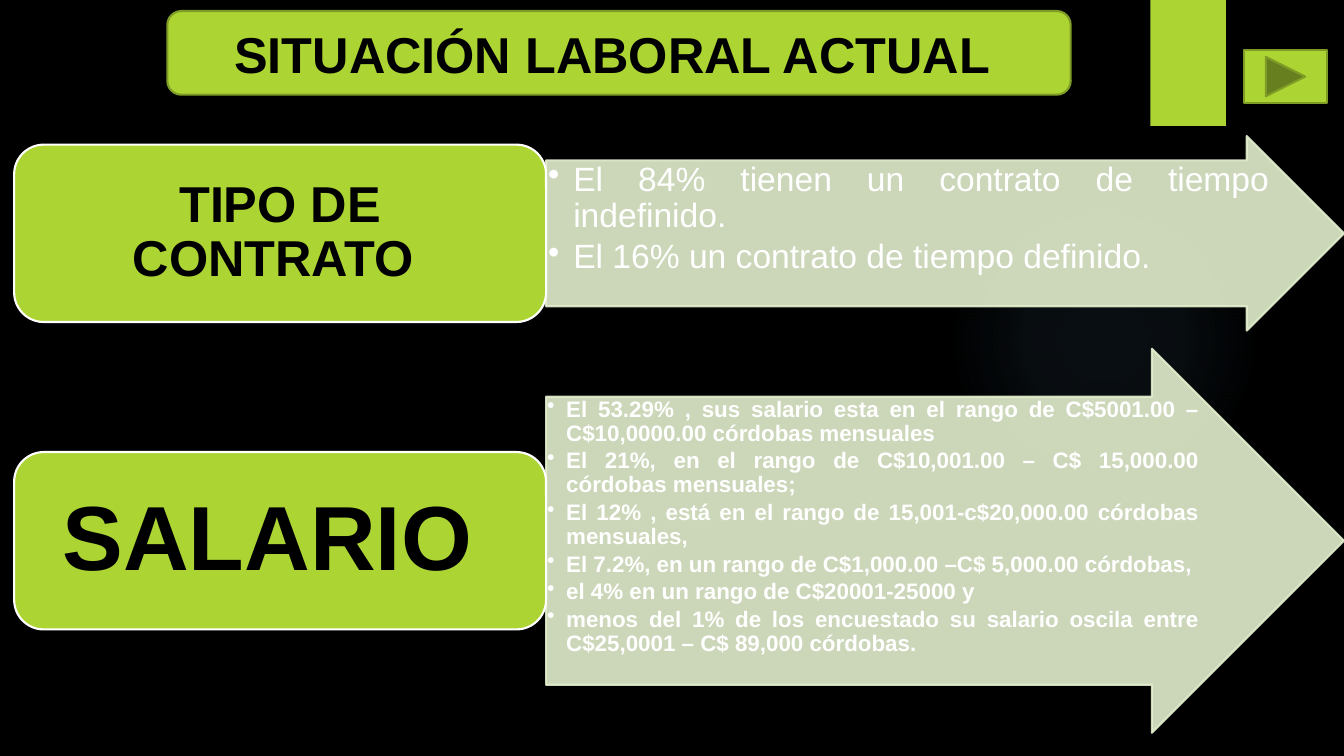
from lxml import etree
from pptx import Presentation
from pptx.dml.color import RGBColor
from pptx.enum.shapes import MSO_SHAPE
from pptx.enum.text import MSO_ANCHOR, PP_ALIGN
from pptx.oxml import parse_xml
from pptx.oxml.ns import nsdecls, qn
from pptx.util import Inches, Pt

RECTANGLE, ROUNDED = MSO_SHAPE.RECTANGLE, MSO_SHAPE.ROUNDED_RECTANGLE
ARROW, OVAL = MSO_SHAPE.RIGHT_ARROW, MSO_SHAPE.OVAL
NEXT_BUTTON = MSO_SHAPE.ACTION_BUTTON_FORWARD_OR_NEXT
TOP, MIDDLE = MSO_ANCHOR.TOP, MSO_ANCHOR.MIDDLE
CENTER, JUSTIFY = PP_ALIGN.CENTER, PP_ALIGN.JUSTIFY

WIDTH, HEIGHT = 13.33, 7.5
BLACK, WHITE = "000000", "FFFFFF"
LIME, OLIVE, PALE, SKY = "ACD433", "7F9D26", "E3EFCE", "7AC4F0"

ROWS_LEFT, ROWS_TOP, ROW_GAP = 0.14, 1.35, 0.18
LABEL_SHARE, LABEL_HEIGHT = 0.4, 1.76
ROWS = [
    dict(
        height=1.93, label="TIPO DE CONTRATO ", label_size=36,
        label_margins=(0.15, 0.07), size=24, bold=False, indent=0.25, margin=0.02,
        points=[
            "El 84% tienen un contrato de tiempo indefinido.",
            "El 16% un contrato de tiempo definido. ",
        ],
    ),
    dict(
        height=3.81, label="SALARIO ", label_size=65,
        label_margins=(0.27, 0.14), size=16, bold=True, indent=0.19, margin=0.01,
        points=[
            "El 53.29% , sus salario esta en el rango de C$5001.00 – C$10,0000.00 córdobas mensuales",
            "El 21%, en el rango de C$10,001.00 – C$ 15,000.00 córdobas mensuales; ",
            "El 12% , está en el rango de 15,001-c$20,000.00 córdobas mensuales, ",
            "El 7.2%, en un rango de C$1,000.00 –C$ 5,000.00 córdobas,",
            "el 4% en un rango de C$20001-25000 y",
            "menos del 1% de los encuestado su salario oscila entre C$25,0001 – C$ 89,000 córdobas. ",
        ],
    ),
]


def color(value):
    return RGBColor.from_string(value)


def add_block(slide, kind, box, fill=LIME, line=None):
    shape = slide.shapes.add_shape(kind, *map(Inches, box))
    shape.shadow.inherit = False
    shape.fill.solid()
    shape.fill.fore_color.rgb = color(fill)
    if line:
        shape.line.color.rgb = color(line)
        shape.line.width = Pt(1.5)
    else:
        shape.line.fill.background()
    return shape


def add_bullet(paragraph, indent):
    properties = paragraph._p.get_or_add_pPr()
    properties.set("marL", str(Inches(indent)))
    properties.set("indent", str(-Inches(indent)))
    etree.SubElement(properties, qn("a:buChar")).set("char", "•")


def write(shape, texts, size, font_color, bold, alignment, anchor,
          margins=(0.1, 0.05), indent=0, spacing=1.0, space_after=0):
    frame = shape.text_frame
    frame.word_wrap = True
    frame.vertical_anchor = anchor
    frame.margin_left = frame.margin_right = Inches(margins[0])
    frame.margin_top = frame.margin_bottom = Inches(margins[1])
    for number, text in enumerate(texts):
        paragraph = frame.add_paragraph() if number else frame.paragraphs[0]
        paragraph.text = text
        if indent:
            add_bullet(paragraph, indent)
        paragraph.alignment = alignment
        paragraph.line_spacing = spacing
        paragraph.space_after = Pt(space_after)
        font = paragraph.font
        font.name, font.size, font.bold = "Arial", Pt(size), bold
        font.color.rgb = color(font_color)


def make_translucent(shape, percent):
    """Apply one opacity to the fill and the outline."""
    for tint in shape._element.spPr.iter(qn("a:srgbClr")):
        etree.SubElement(tint, qn("a:alpha")).set("val", str(percent * 1000))


def add_glow(slide, box):
    """Add a faint disc that fades out from its centre."""
    glow = add_block(slide, OVAL, box, SKY)
    stops = "".join(
        f'<a:gs pos="{position * 1000}"><a:srgbClr val="{SKY}">'
        f'<a:alpha val="{opacity * 1000}"/></a:srgbClr></a:gs>'
        for position, opacity in [(0, 7), (36, 6), (69, 0), (100, 0)])
    gradient = parse_xml(
        f'<a:gradFill {nsdecls("a")} rotWithShape="1"><a:gsLst>{stops}</a:gsLst>'
        '<a:path path="circle"><a:fillToRect l="50000" t="50000" r="50000" b="50000"/>'
        '</a:path></a:gradFill>')
    properties = glow._element.spPr
    properties.replace(properties.find(qn("a:solidFill")), gradient)


def add_backdrop(slide):
    slide.background.fill.solid()
    slide.background.fill.fore_color.rgb = color(BLACK)
    add_glow(slide, (9.41, 1.83, 3.08, 3.08))
    add_block(slide, RECTANGLE, (11.41, 0, 0.75, HEIGHT / 6))


def add_header(slide):
    title = add_block(slide, ROUNDED, (1.66, 0.11, 8.96, 0.83), line=OLIVE)
    write(title, ["SITUACIÓN LABORAL ACTUAL "], 36, BLACK, True, CENTER, MIDDLE)
    add_block(slide, NEXT_BUTTON, (12.34, 0.5, 0.82, 0.52), line=OLIVE)


def add_row(slide, row, left, top, width):
    """Place a label and, to its right, the arrow that holds its points."""
    label_width = width * LABEL_SHARE
    arrow = add_block(
        slide, ARROW, (left + label_width, top, width - label_width, row["height"]),
        PALE, PALE)
    arrow.adjustments[0], arrow.adjustments[1] = 0.75, 0.5
    make_translucent(arrow, 90)
    write(arrow, row["points"], row["size"], WHITE, row["bold"], JUSTIFY, TOP,
          (row["margin"], row["margin"]), row["indent"], 0.9, row["size"] * 0.15)

    label_top = top + (row["height"] - LABEL_HEIGHT) / 2
    label = add_block(
        slide, ROUNDED, (left, label_top, label_width, LABEL_HEIGHT), line=WHITE)
    write(label, [row["label"]], row["label_size"], BLACK, True, CENTER, MIDDLE,
          row["label_margins"], spacing=0.9)


def main():
    presentation = Presentation()
    presentation.slide_width = Inches(WIDTH)
    presentation.slide_height = Inches(HEIGHT)
    slide = presentation.slides.add_slide(presentation.slide_layouts[6])
    add_backdrop(slide)
    add_header(slide)
    top = ROWS_TOP
    for row in ROWS:
        add_row(slide, row, ROWS_LEFT, top, WIDTH - ROWS_LEFT)
        top += row["height"] + ROW_GAP
    presentation.save("out.pptx")


if __name__ == "__main__":
    main()
